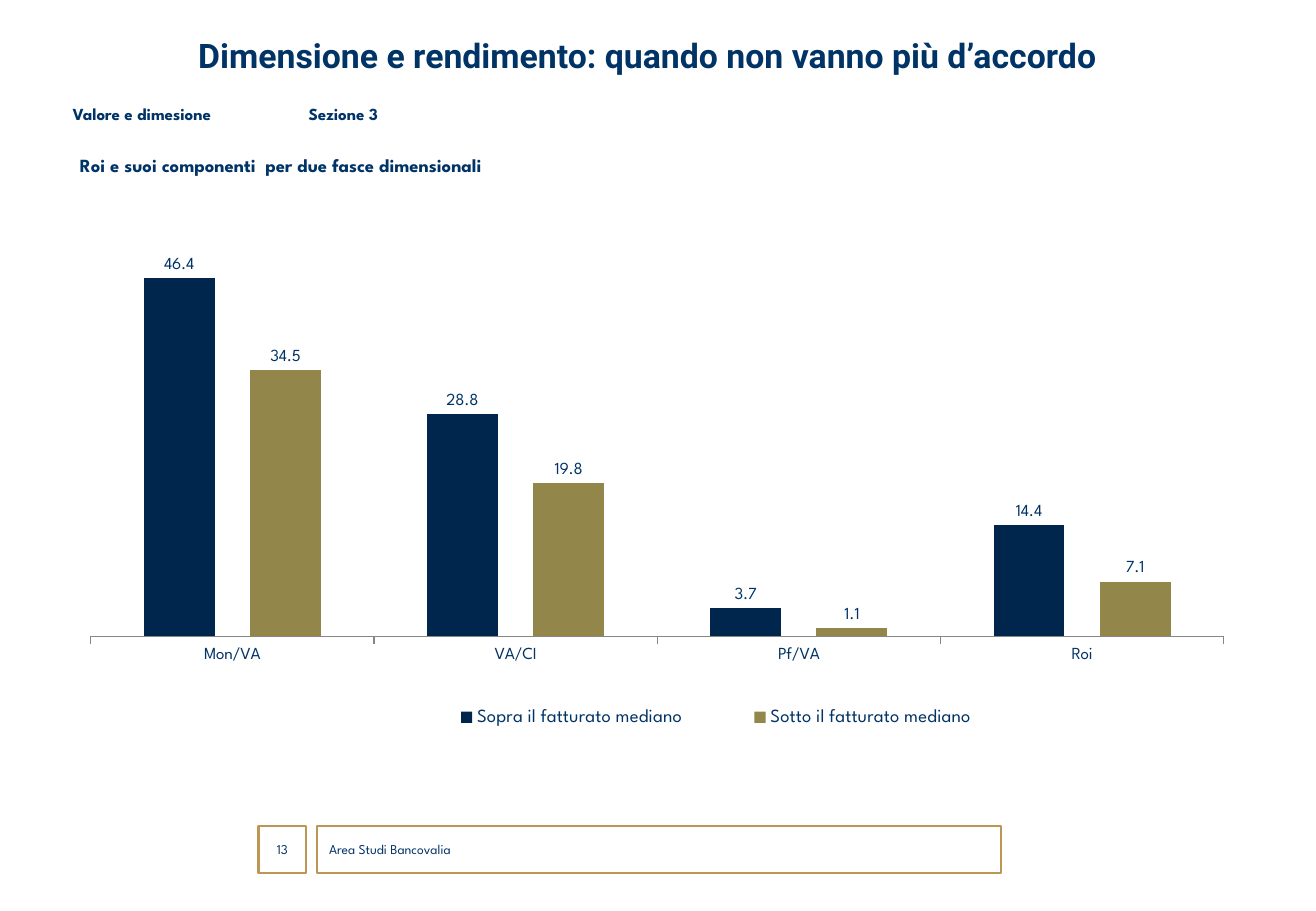
from lxml import etree
from pptx import Presentation
from pptx.chart.data import CategoryChartData
from pptx.dml.color import RGBColor
from pptx.enum import chart as charts, shapes, text
from pptx.oxml import parse_xml
from pptx.oxml.ns import nsdecls, qn
from pptx.util import Cm, Pt

NAVY, GOLD = "003366", "BD9554"
SPARTAN = "League Spartan"
MID = text.MSO_ANCHOR.MIDDLE
CENTER = text.PP_ALIGN.CENTER


def color(code):
    return RGBColor.from_string(code)


def style(font, size, name=SPARTAN, bold=False):
    font.size, font.name, font.bold = Pt(size), name, bold
    font.color.rgb = color(NAVY)


def write(shape, words, size, name=SPARTAN, bold=False,
          align=text.PP_ALIGN.LEFT, anchor=text.MSO_ANCHOR.TOP, tab=None):
    frame = shape.text_frame
    frame.word_wrap = True
    frame.vertical_anchor = anchor
    frame.text = words
    para = frame.paragraphs[0]
    para.alignment = align
    if tab:
        stops = etree.SubElement(para._p.get_or_add_pPr(), qn("a:tabLst"))
        etree.SubElement(stops, qn("a:tab"), pos=str(tab), algn="l")
    for run in para.runs:
        style(run.font, size, name, bold)


def label(slide, box, words, size, **look):
    write(slide.shapes.add_textbox(*box), words, size, **look)


def frame(slide, box, words, align):
    """Gold outlined box of the footer."""
    shape = slide.shapes.add_shape(shapes.MSO_SHAPE.RECTANGLE, *box)
    shape.shadow.inherit = False
    shape.fill.background()
    shape.line.color.rgb = color(GOLD)
    shape.line.width = Pt(1.5)
    write(shape, words, 8, align=align, anchor=MID)


def header(slide, left, top, width):
    label(slide, (left, top, width, Cm(1.32)),
          "Dimensione e rendimento: quando non vanno più d’accordo",
          20, name="Roboto", bold=True, align=CENTER)
    label(slide, (left + Cm(0.25), top + Cm(1.37), width, Cm(0.79)),
          "Valore e dimesione \tSezione 3", 10, bold=True, anchor=MID,
          tab=Cm(4.93))
    label(slide, (left + Cm(0.4), top + Cm(2.49), width, Cm(0.97)),
          "Roi e suoi componenti  per due fasce dimensionali", 11, bold=True)


def footer(slide, left, top, width, side):
    frame(slide, (left, top, side, side), "13", CENTER)
    start = side + Cm(0.23)
    frame(slide, (left + start, top, width - start, side),
          "Area Studi Bancovalia", text.PP_ALIGN.LEFT)


def layout(x, y, w, h, inner=False):
    target = '<c:layoutTarget val="inner"/>' if inner else ""
    return parse_xml(
        f'<c:layout {nsdecls("c")}><c:manualLayout>{target}'
        '<c:xMode val="edge"/><c:yMode val="edge"/>'
        f'<c:x val="{x}"/><c:y val="{y}"/><c:w val="{w}"/><c:h val="{h}"/>'
        '</c:manualLayout></c:layout>')


def bars(slide, box):
    data = CategoryChartData(number_format="0.0")
    data.categories = ["Mon/VA", "VA/CI", "Pf/VA", "Roi"]
    data.add_series("Sopra il fatturato mediano", [46.4, 28.8, 3.7, 14.4])
    data.add_series("Sotto il fatturato mediano", [34.5, 19.8, 1.1, 7.1])
    chart = slide.shapes.add_chart(
        charts.XL_CHART_TYPE.COLUMN_CLUSTERED, *box, data).chart
    chart.has_title = False
    style(chart.font, 10)

    plot = chart.plots[0]
    plot.vary_by_categories = False
    plot.gap_width, plot.overlap = 150, -50
    for series, fill in zip(plot.series, ("00264D", "93864A")):
        series.format.fill.solid()
        series.format.fill.fore_color.rgb = color(fill)
    plot.has_data_labels = True
    tags = plot.data_labels
    tags.show_value = True
    tags.number_format, tags.number_format_is_linked = "0.0", False
    tags.position = charts.XL_LABEL_POSITION.OUTSIDE_END
    style(tags.font, 10)

    values = chart.value_axis
    values.visible = values.has_major_gridlines = False
    values.minimum_scale, values.maximum_scale = 0, 50
    groups = chart.category_axis
    groups.major_tick_mark = charts.XL_TICK_MARK.OUTSIDE
    groups.format.line.color.rgb = color("868686")
    groups.format.line.width = Pt(0.75)

    chart.has_legend = True
    legend = chart.legend
    legend.position = charts.XL_LEGEND_POSITION.BOTTOM
    legend.include_in_layout = False
    style(legend.font, 11)
    key = legend._element
    key.find(qn("c:legendPos")).addnext(layout(0.27, 0.9, 0.56, 0.08))
    area = chart._chartSpace.chart.plotArea
    for old in area.findall(qn("c:layout")):
        area.remove(old)
    area.insert(0, layout(0.004, 0.037, 0.989, 0.747, inner=True))


def main():
    deck = Presentation()
    deck.slide_width, deck.slide_height = Cm(27.51), Cm(19.05)
    slide = deck.slides.add_slide(deck.slide_layouts[6])
    header(slide, Cm(1.02), Cm(0.61), Cm(25.04))
    bars(slide, (Cm(1.8), Cm(4.83), Cm(23.95), Cm(10.82)))
    footer(slide, Cm(5.41), Cm(17.27), Cm(15.52), Cm(0.99))
    deck.save("out.pptx")


if __name__ == "__main__":
    main()
